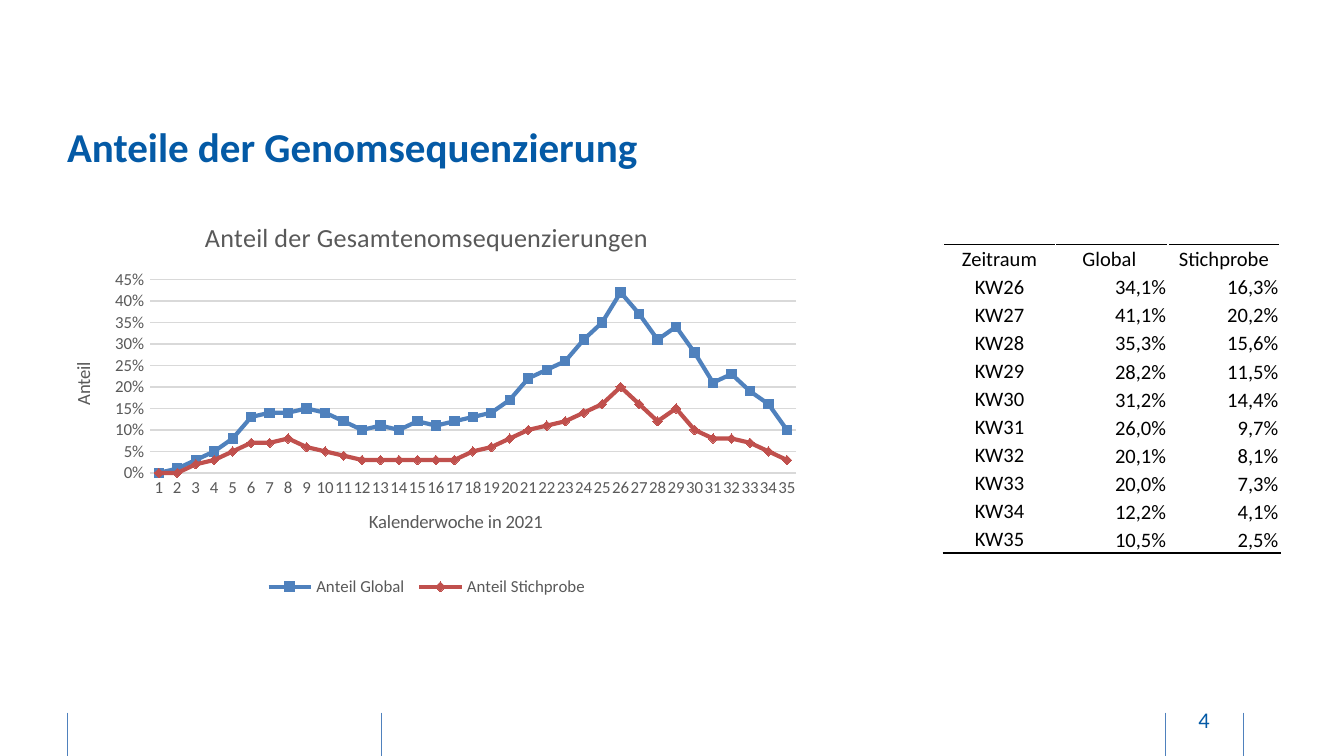
from lxml import etree
from pptx import Presentation
from pptx.chart.data import CategoryChartData
from pptx.dml.color import RGBColor
from pptx.enum.chart import XL_CHART_TYPE, XL_LEGEND_POSITION, XL_TICK_MARK
from pptx.enum.shapes import MSO_CONNECTOR
from pptx.enum.text import MSO_ANCHOR, PP_ALIGN
from pptx.oxml import parse_xml
from pptx.oxml.ns import nsdecls, qn
from pptx.util import Cm, Pt

LINE_CHART = XL_CHART_TYPE.LINE
BOTTOM_LEGEND = XL_LEGEND_POSITION.BOTTOM
NO_TICK = XL_TICK_MARK.NONE
STRAIGHT = MSO_CONNECTOR.STRAIGHT
MIDDLE, BOTTOM = MSO_ANCHOR.MIDDLE, MSO_ANCHOR.BOTTOM
LEFT, CENTER, RIGHT = PP_ALIGN.LEFT, PP_ALIGN.CENTER, PP_ALIGN.RIGHT

# Data
SERIES = [
    ("Anteil Global ", "4F81BD",
     [0, 1, 3, 5, 8, 13, 14, 14, 15, 14, 12, 10, 11, 10, 12, 11, 12, 13, 14, 17,
      22, 24, 26, 31, 35, 42, 37, 31, 34, 28, 21, 23, 19, 16, 10]),
    ("Anteil Stichprobe", "C0504D",
     [0, 0, 2, 3, 5, 7, 7, 8, 6, 5, 4, 3, 3, 3, 3, 3, 3, 5, 6, 8,
      10, 11, 12, 14, 16, 20, 16, 12, 15, 10, 8, 8, 7, 5, 3]),
]
ROWS = [
    ("Zeitraum", "Global ", "Stichprobe"),
    ("KW26", "34,1%", "16,3%"),
    ("KW27", "41,1%", "20,2%"),
    ("KW28", "35,3%", "15,6%"),
    ("KW29", "28,2%", "11,5%"),
    ("KW30", "31,2%", "14,4%"),
    ("KW31", "26,0%", "9,7%"),
    ("KW32", "20,1%", "8,1%"),
    ("KW33", "20,0%", "7,3%"),
    ("KW34", "12,2%", "4,1%"),
    ("KW35", "10,5%", "2,5%"),
]


def rgb(value):
    return RGBColor.from_string(value)


class Deck:
    font = "Calibri"
    blue, accent = "045AA6", "4F81BD"
    black, grey, grid = "000000", "595959", "D9D9D9"

    def __init__(self, prs):
        self.s = prs.slides.add_slide(prs.slide_layouts[6])

    def style(self, font, size, color, bold=False):
        font.name, font.size, font.bold = self.font, Pt(size), bold
        font.color.rgb = rgb(color)

    def rule(self, x, top, bottom):
        sp = self.s.shapes.add_connector(STRAIGHT, Cm(x), Cm(top), Cm(x), Cm(bottom))
        sp.line.color.rgb = rgb(self.accent)
        sp.line.width = Pt(0.5)
        etree.SubElement(sp._element.spPr, qn("a:effectLst"))

    def text(self, text, x, y, w, h, size, align=LEFT, bold=False):
        tf = self.s.shapes.add_textbox(Cm(x), Cm(y), Cm(w), Cm(h)).text_frame
        tf.word_wrap = True
        tf.vertical_anchor = MIDDLE
        tf.margin_left = tf.margin_right = tf.margin_top = tf.margin_bottom = 0
        p = tf.paragraphs[0]
        p.text, p.alignment = text, align
        self.style(p.font, size, self.blue, bold)

    def border(self, cell, side):
        cell._tc.get_or_add_tcPr().insert(0, parse_xml(
            f'<a:{side} {nsdecls("a")} w="12700"><a:solidFill>'
            f'<a:srgbClr val="{self.black}"/></a:solidFill></a:{side}>'))

    def table(self, rows, x, y, col_w, row_h):
        n_rows, n_cols = len(rows), len(rows[0])
        table = self.s.shapes.add_table(n_rows, n_cols, Cm(x), Cm(y),
                                        Cm(col_w * n_cols), Cm(row_h * n_rows)).table
        table.first_row = table.horz_banding = False
        for col in table.columns:
            col.width = Cm(col_w)
        for i, row in enumerate(rows):
            table.rows[i].height = Cm(row_h)
            for j, text in enumerate(row):
                number = i > 0 and j > 0
                cell = table.cell(i, j)
                cell.fill.background()
                cell.margin_left = cell.margin_right = cell.margin_top = Cm(0.03)
                cell.margin_bottom = 0
                cell.vertical_anchor = BOTTOM if number else MIDDLE
                p = cell.text_frame.paragraphs[0]
                p.text, p.alignment = text, RIGHT if number else CENTER
                self.style(p.font, 11, self.black)
                if i == 0:
                    self.border(cell, "lnT")
                elif i == n_rows - 1:
                    self.border(cell, "lnB")

    def chart_title(self, owner, text, size):
        tf = (owner.chart_title if hasattr(owner, "chart_title") else owner.axis_title).text_frame
        p = tf.paragraphs[0]
        p.text = text
        self.style(p.font, size, self.grey)

    def line_chart(self, title, x_title, y_title, series, x, y, w, h, plot_area):
        data = CategoryChartData(number_format="0%")
        data.categories = [str(week + 1) for week in range(len(series[0][2]))]
        for name, _, percents in series:
            data.add_series(name, [v / 100 for v in percents])
        chart = self.s.shapes.add_chart(LINE_CHART, Cm(x), Cm(y), Cm(w), Cm(h), data).chart
        self.style(chart.font, 10, self.black)
        self.chart_title(chart, title, 14)
        chart.chart_title.include_in_layout = False

        # Axes
        cat, val = chart.category_axis, chart.value_axis
        for axis, text in ((cat, x_title), (val, y_title)):
            self.chart_title(axis, text, 10)
            axis.major_tick_mark = axis.minor_tick_mark = NO_TICK
            self.style(axis.tick_labels.font, 9, self.grey)
        val.minimum_scale, val.maximum_scale, val.major_unit = 0, 0.45, 0.05
        val.tick_labels.number_format = "0%"
        val.tick_labels.number_format_is_linked = False
        val.format.line.fill.background()
        for line in (cat.format.line, val.major_gridlines.format.line):
            line.color.rgb = rgb(self.grid)
            line.width = Pt(0.75)

        # Series
        plot = chart.plots[0]
        plot.vary_by_categories = False
        for ser, (_, color, _) in zip(plot.series, series):
            ser.smooth = False
            ser.marker.style = None
            ser.format.line.color.rgb = rgb(color)
            ser.format.line.width = Pt(2.25)

        # Legend and plot area
        chart.has_legend = True
        chart.legend.position = BOTTOM_LEGEND
        chart.legend.include_in_layout = False
        self.style(chart.legend.font, 9, self.grey)
        area = chart._chartSpace.chart.plotArea
        for old in area.findall(qn("c:layout")):
            area.remove(old)
        sizes = "".join(f'<c:{k} val="{v}"/>' for k, v in zip("xywh", plot_area))
        area.insert(0, parse_xml(
            f'<c:layout {nsdecls("c")}><c:manualLayout><c:layoutTarget val="inner"/>'
            f'<c:xMode val="edge"/><c:yMode val="edge"/>{sizes}'
            f'</c:manualLayout></c:layout>'))


def main():
    prs = Presentation()
    prs.slide_width, prs.slide_height = Cm(25.4), Cm(14.29)
    deck = Deck(prs)

    # Footer rules and page number
    for x in (1.27, 7.21, 22.02, 23.5):
        deck.rule(x, 13.47, 14.29)
    deck.text("4", 22.07, 13.23, 1.37, 0.76, 12, CENTER)

    # Title
    deck.text("Anteile der Genomsequenzierung", 1.27, 1.78, 22.17, 1.98, 22, bold=True)

    # Table and chart
    deck.table(ROWS, 17.83, 4.62, 2.12, 0.53)
    deck.line_chart("Anteil der Gesamtenomsequenzierungen", "Kalenderwoche in 2021",
                    "Anteil", SERIES, 0.79, 3.76, 14.55, 7.62,
                    (0.14, 0.2, 0.84, 0.48))
    prs.save("out.pptx")


if __name__ == "__main__":
    main()
